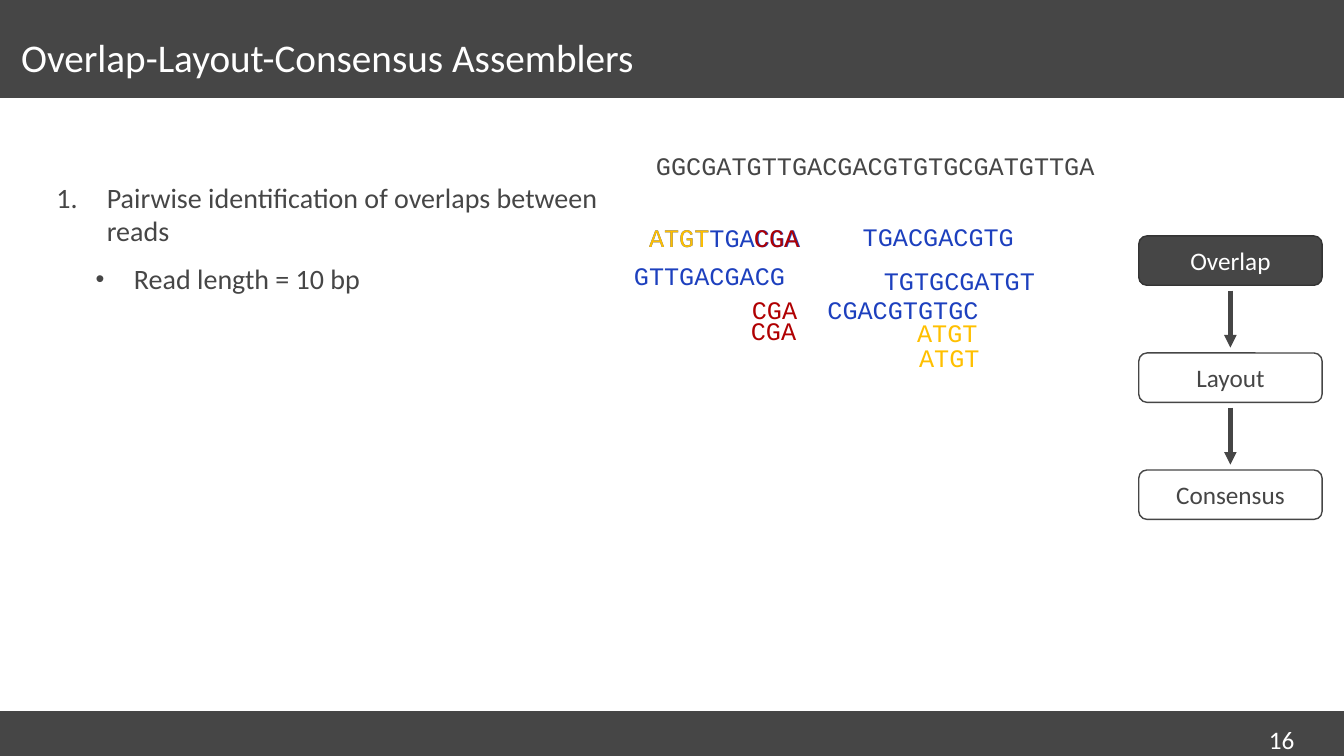
from dataclasses import dataclass

from lxml import etree
from pptx import Presentation
from pptx.dml.color import RGBColor
from pptx.enum.shapes import MSO_CONNECTOR, MSO_SHAPE
from pptx.enum.text import MSO_ANCHOR, MSO_AUTO_SIZE, PP_ALIGN
from pptx.oxml.ns import qn
from pptx.util import Pt

RECT, ROUNDED = MSO_SHAPE.RECTANGLE, MSO_SHAPE.ROUNDED_RECTANGLE
STRAIGHT = MSO_CONNECTOR.STRAIGHT
MIDDLE = MSO_ANCHOR.MIDDLE
LEFT, CENTER = PP_ALIGN.LEFT, PP_ALIGN.CENTER
NO_FIT, FIT_SHAPE = MSO_AUTO_SIZE.NONE, MSO_AUTO_SIZE.SHAPE_TO_FIT_TEXT


@dataclass(frozen=True)
class Theme:
    dark: str = "464646"
    edge: str = "343434"
    white: str = "FFFFFF"
    blue: str = "1D40BE"
    yellow: str = "FFC000"
    red: str = "B00002"
    font: str = "Calibri"
    mono: str = "Courier New"
    title: int = 28
    body: int = 20
    label: int = 18


T = Theme()

READS = [
    ("GGCGATGTTGACGACGTGTGCGATGTTGA", T.dark, 461.5, 103.7, 329),
    ("TGACGACGTG", T.blue, 609.1, 154.8, 123.1),
    ("CGACGTGTGC", T.blue, 583.9, 206.6, 123.1),
    ("GTTGACGACG", T.blue, 445.7, 182.2, 123.1),
    ("TGTGCGATGT", T.blue, 624.2, 185.8, 123.1),
    ("ATGT", T.yellow, 648, 223.2, 58.3),
    ("ATGT", T.yellow, 649.4, 241.2, 58.3),
    ("ATGTTGACGA", T.blue, 456.5, 155.5, 123.1),
    ("ATGT", T.yellow, 456.5, 155.5, 58.3),
    ("CGA", T.red, 531.4, 155.5, 46.8),
    ("CGA", T.red, 529.2, 221.8, 46.8),
    ("CGA", T.red, 529.9, 206.6, 46.8),
]

STAGES = ["Overlap", "Layout", "Consensus"]
STAGE_LEFT, STAGE_TOP, STAGE_W, STAGE_H, STAGE_STEP = 813.4, 168.5, 131, 35.3, 83.6
ARROW_GAP = 3.8


def rgb(color):
    return RGBColor.from_string(color)


def write(p, text, size=T.label, color=T.dark, font=T.font, align=LEFT):
    p.alignment = align
    r = p.add_run()
    r.text = text
    r.font.size, r.font.name = Pt(size), font
    r.font.color.rgb = rgb(color)


def add_box(s, kind, x, y, w, h, fill, line=None):
    sp = s.shapes.add_shape(kind, Pt(x), Pt(y), Pt(w), Pt(h))
    sp.shadow.inherit = False
    sp.fill.solid()
    sp.fill.fore_color.rgb = rgb(fill)
    if line:
        sp.line.color.rgb = rgb(line)
        sp.line.width = Pt(1)
    else:
        sp.line.fill.background()
    return sp


def add_text(s, x, y, w, h, text, **style):
    tf = s.shapes.add_textbox(Pt(x), Pt(y), Pt(w), Pt(h)).text_frame
    tf.word_wrap = False
    tf.auto_size = FIT_SHAPE
    write(tf.paragraphs[0], text, **style)


def add_arrow(s, x, top, bottom):
    line = s.shapes.add_connector(STRAIGHT, Pt(x), Pt(top), Pt(x), Pt(bottom))
    line.line.color.rgb = rgb(T.dark)
    line.line.width = Pt(3)
    ln = line.line.fill._xPr
    etree.SubElement(ln, qn("a:tailEnd"), type="triangle")
    etree.SubElement(ln.getparent(), qn("a:effectLst"))


def set_bullet(p, margin, hang, tag, size=100, **attrs):
    pPr = p._p.get_or_add_pPr()
    pPr.set("marL", str(Pt(margin)))
    pPr.set("indent", str(-Pt(hang)))
    color = etree.SubElement(pPr, qn("a:buClr"))
    etree.SubElement(color, qn("a:srgbClr"), val=T.dark)
    etree.SubElement(pPr, qn("a:buSzPct"), val=str(size * 1000))
    etree.SubElement(pPr, qn("a:buFont"), typeface="Arial")
    etree.SubElement(pPr, qn(tag), **attrs)


def add_title(s, text):
    title = s.shapes.title
    title.left, title.top, title.width, title.height = Pt(15.1), Pt(16.6), Pt(829.4), Pt(54)
    tf = title.text_frame
    tf.margin_left = tf.margin_right = 0
    tf.vertical_anchor = MIDDLE
    tf.word_wrap = True
    tf.auto_size = NO_FIT
    p = tf.paragraphs[0]
    p.line_spacing = 0.8
    write(p, text, size=T.title, color=T.white)


def add_bars(s):
    """Header and footer bands, placed behind the title."""
    for top, height in ((0, 70), (507.9, 32.1)):
        bar = add_box(s, RECT, 0, top, 960, height, T.dark)
        s.shapes.title.element.addprevious(bar.element)


def add_body(s):
    tf = s.shapes.add_textbox(Pt(40.3), Pt(125.3), Pt(419), Pt(362.9)).text_frame
    tf.margin_left = tf.margin_right = 0
    tf.word_wrap = True
    step = tf.paragraphs[0]
    set_bullet(step, 36, 36, "a:buAutoNum", type="arabicPeriod")
    step.space_after = Pt(4)
    write(step, "Pairwise identification of overlaps between reads", size=T.body)
    detail = tf.add_paragraph()
    detail.level = 1
    set_bullet(detail, 55.4, 27.4, "a:buChar", size=90, char="•")
    detail.space_before, detail.space_after = Pt(6), Pt(4)
    write(detail, "Read length = 10 bp", size=T.body)


def add_stages(s, active):
    for i, name in enumerate(STAGES):
        top = STAGE_TOP + i * STAGE_STEP
        fill, line, color = (T.dark, T.edge, T.white) if name == active else (T.white, T.dark, T.dark)
        sp = add_box(s, ROUNDED, STAGE_LEFT, top, STAGE_W, STAGE_H, fill, line)
        tf = sp.text_frame
        tf.vertical_anchor = MIDDLE
        write(tf.paragraphs[0], name, color=color, align=CENTER)
        if i:
            add_arrow(s, STAGE_LEFT + STAGE_W / 2,
                      top - STAGE_STEP + STAGE_H + ARROW_GAP, top - ARROW_GAP)


def main():
    prs = Presentation()
    prs.slide_width, prs.slide_height = Pt(960), Pt(540)
    s = prs.slides.add_slide(prs.slide_layouts[5])
    add_title(s, "Overlap-Layout-Consensus Assemblers")
    add_bars(s)
    add_body(s)
    add_text(s, 899.3, 514.1, 50.4, 18, "16", color=T.white)
    add_stages(s, "Overlap")
    for bases, color, x, y, w in READS:
        add_text(s, x, y, w, 28.8, bases, color=color, font=T.mono)
    prs.save("out.pptx")


if __name__ == "__main__":
    main()
